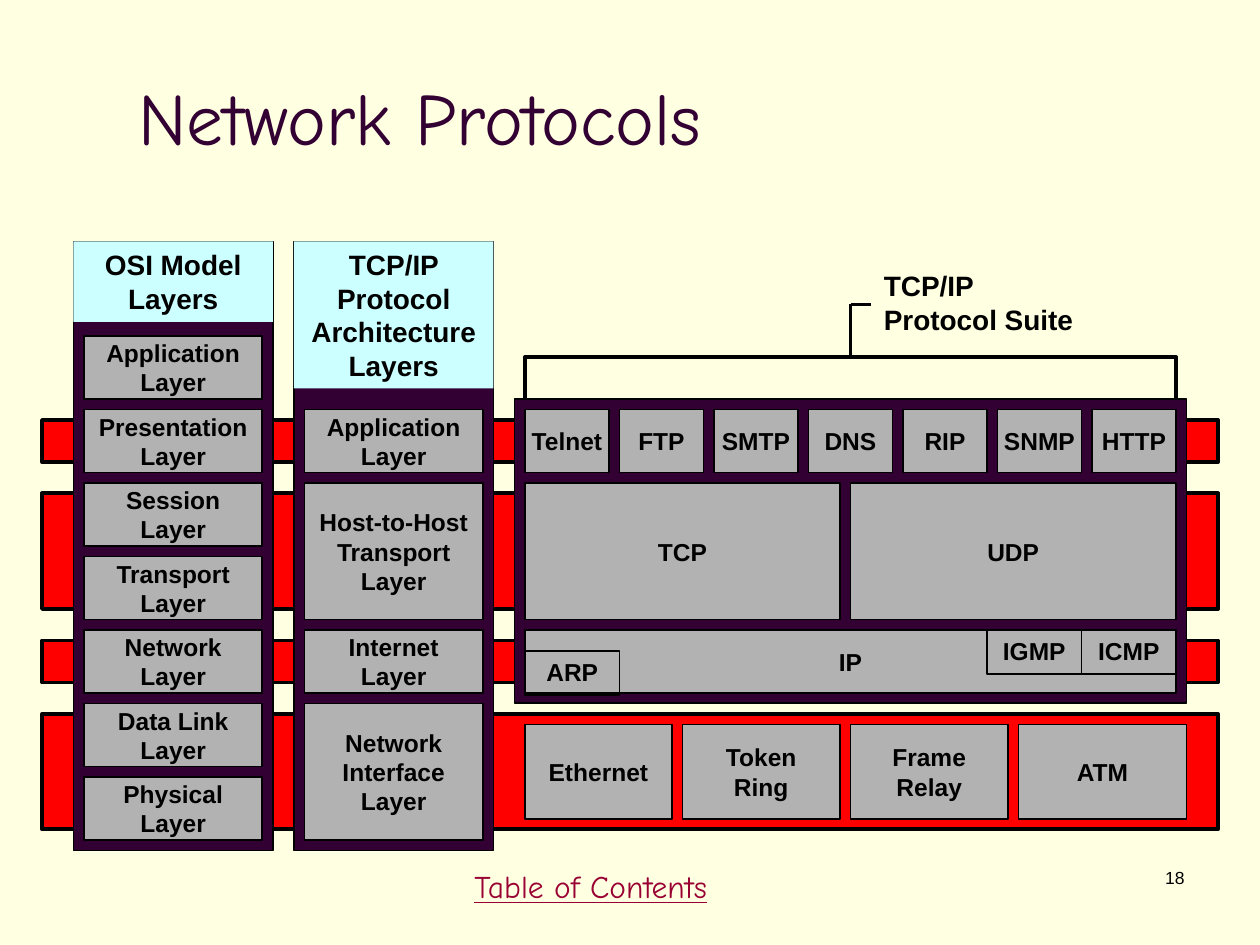
from pptx import Presentation
from pptx.dml.color import RGBColor
from pptx.enum import shapes, text
from pptx.oxml.ns import qn
from pptx.util import Pt

CREAM, PLUM, RED, GREY, AQUA, BLACK, WINE = (
    "FFFFE1", "330033", "FF0000", "B2B2B2", "CCFFFF", "000000", "990033")
LEFT, CENTER, RIGHT = text.PP_ALIGN.LEFT, text.PP_ALIGN.CENTER, text.PP_ALIGN.RIGHT

GAP = 6
ROW_TOP, ROW_PITCH = 192, 42
STACK_TOP, STACK_WIDTH, STACK_HEIGHT = 138, 114, 348
SUITE_LEFT, SUITE_WIDTH = 300, 372

bands = [(5, 2), (4, 1), (2, 2), (1, 1)]

stacks = [
    (168, "TCP/IP Protocol Architecture Layers", 84, [
        ("Application\nLayer", 1, 1),
        ("Host-to-Host\nTransport\nLayer", 2, 2),
        ("Internet\nLayer", 4, 1),
        ("Network\nInterface\nLayer", 5, 2),
    ]),
    (42, "OSI Model Layers", 46, [
        (f"{layer}\nLayer", row, 1) for row, layer in enumerate(
            ["Application", "Presentation", "Session", "Transport",
             "Network", "Data Link", "Physical"])
    ]),
]

applications = ["Telnet", "FTP", "SMTP", "DNS", "RIP", "SNMP", "HTTP"]
suite_rows = [
    (1, 1, [(name, 48) for name in applications]),
    (2, 2, [("TCP", 180), ("UDP", 186)]),
    (4, 1, [("IP", SUITE_WIDTH)]),
]
networks = [("Ethernet", 84), ("Token\nRing", 90), ("Frame\nRelay", 90), ("ATM", 96)]
helpers = [("ARP", 300, 372), ("ICMP", 618, 360), ("IGMP", 564, 360)]


def color(value):
    return RGBColor.from_string(value)


def row_span(row, count):
    return ROW_TOP + row * ROW_PITCH, count * ROW_PITCH - GAP


def write(shape, words, size, font="Arial", ink=BLACK, bold=True, align=CENTER,
          anchor=text.MSO_ANCHOR.TOP, wrap=True, underline=None):
    frame = shape.text_frame
    frame.text = words
    frame.word_wrap = wrap
    frame.vertical_anchor = anchor
    for paragraph in frame.paragraphs:
        paragraph.alignment = align
        paragraph.font.name = font
        paragraph.font.size = Pt(size)
        paragraph.font.bold = bold
        paragraph.font.underline = underline
        paragraph.font.color.rgb = color(ink)


def add_box(left, top, width, height, fill=None, line=1):
    box = slide.shapes.add_shape(
        shapes.MSO_SHAPE.RECTANGLE, Pt(left), Pt(top), Pt(width), Pt(height))
    box.shadow.inherit = False
    if fill:
        box.fill.solid()
        box.fill.fore_color.rgb = color(fill)
    else:
        box.fill.background()
    if line:
        box.line.color.rgb = color(BLACK)
        box.line.width = Pt(line)
    else:
        box.line.fill.background()
    return box


def add_cell(words, left, top, width, height):
    write(add_box(left, top, width, height, GREY), words, 14,
          anchor=text.MSO_ANCHOR.MIDDLE, wrap=False)


def add_cells(cells, top, height):
    left = SUITE_LEFT
    for words, width in cells:
        add_cell(words, left, top, width, height)
        left += width + GAP


def add_label(words, left, top, width, height, size, **style):
    label = slide.shapes.add_textbox(Pt(left), Pt(top), Pt(width), Pt(height))
    write(label, words, size, **style)
    return label


def add_line(x1, y1, x2, y2):
    line = slide.shapes.add_connector(
        shapes.MSO_CONNECTOR.STRAIGHT, Pt(x1), Pt(y1), Pt(x2), Pt(y2))
    line.line.color.rgb = color(BLACK)
    line.line.width = Pt(2.25)
    properties = line._element.spPr
    properties.append(properties.makeelement(qn("a:effectLst"), {}))
    return line


deck = Presentation()
deck.slide_width, deck.slide_height = Pt(720), Pt(540)
slide = deck.slides.add_slide(deck.slide_layouts[6])
slide.background.fill.solid()
slide.background.fill.fore_color.rgb = color(CREAM)

add_label("18", 534, 492, 150, 36, 10, bold=False, align=RIGHT)
add_label("Table of Contents", 264, 492, 234, 36, 18, font="Comic Neue",
          ink=WINE, bold=False, align=LEFT, underline=True)
add_label("Network Protocols", 72, 21.6, 612, 90, 42, font="Comic Neue",
          ink=PLUM, bold=False, align=LEFT, anchor=text.MSO_ANCHOR.MIDDLE)

for row, count in bands:
    top, height = row_span(row, count)
    add_box(24, top + GAP, 672, height - 2 * GAP, RED, 2.25)

bracket = add_box(SUITE_LEFT, 204, SUITE_WIDTH, 42, line=2.25)
add_box(SUITE_LEFT - GAP, 228, SUITE_WIDTH + 2 * GAP, 174, PLUM)

for left, heading, heading_height, layers in stacks:
    add_box(left, STACK_TOP, STACK_WIDTH, STACK_HEIGHT, PLUM)
    for words, row, count in layers:
        add_cell(words, left + GAP, *(row_span(row, count)[:1]),
                 STACK_WIDTH - 2 * GAP, row_span(row, count)[1])
    write(add_box(left, STACK_TOP, STACK_WIDTH, heading_height, AQUA, None),
          heading, 16)

for row, count, cells in suite_rows:
    add_cells(cells, *row_span(row, count))
add_cells(networks, 414, 54)

suite_label = add_label("TCP/IP Protocol Suite", 498, 150, 132, 48, 16, align=LEFT)
stem = add_line(486, 204, 486, 174)
stem.begin_connect(bracket, 0)
branch = add_line(486, 174, 498, 174)
branch.end_connect(suite_label, 1)

for words, left, top in helpers:
    write(add_box(left, top, 54, 25.2), words, 14)

deck.save("out.pptx")
